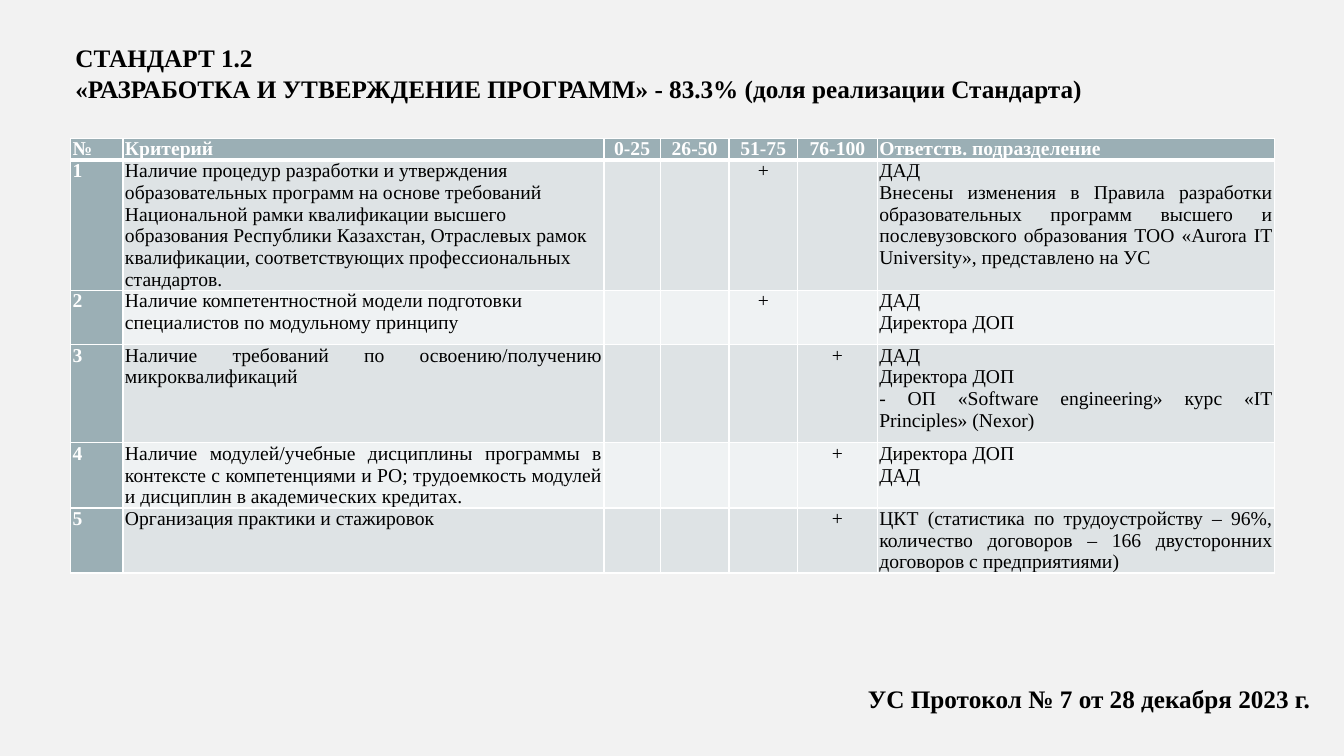
from lxml import etree
from pptx import Presentation, util as u
from pptx.dml.color import RGBColor
from pptx.enum import text as t
from pptx.oxml import ns

LEFT, CENTER, JUSTIFY = t.PP_ALIGN.LEFT, t.PP_ALIGN.CENTER, t.PP_ALIGN.JUSTIFY
COLUMN_WIDTHS = [1.32, 12.12, 1.42, 1.73, 1.73, 2.01, 10.01]
ROW_HEIGHTS = [0.56, 3.28, 1.37, 2.47, 1.64, 1.64]
HEADINGS = ["№", "Критерий", "0-25", "26-50", "51-75", "76-100", "Ответств. подразделение"]
SCORE_COLUMNS = range(2, 6)
CRITERIA = [
    ("Наличие процедур разработки и утверждения образовательных программ на основе требований "
     "Национальной рамки квалификации высшего образования Республики Казахстан, Отраслевых рамок "
     "квалификации, соответствующих профессиональных стандартов.", LEFT, "51-75",
     ["ДАД", "Внесены изменения в Правила разработки образовательных программ высшего и "
      "послевузовского образования ТОО «Aurora IT University», представлено на УС"]),
    ("Наличие компетентностной модели подготовки специалистов по модульному принципу",
     LEFT, "51-75", ["ДАД", "Директора ДОП"]),
    ("Наличие требований по освоению/получению микроквалификаций", JUSTIFY, "76-100",
     ["ДАД", "Директора ДОП", "- ОП «Software engineering» курс «IT Principles» (Nexor)"]),
    ("Наличие модулей/учебные дисциплины программы в контексте с компетенциями и РО; "
     "трудоемкость модулей и дисциплин в академических кредитах.", JUSTIFY, "76-100",
     ["Директора ДОП", "ДАД"]),
    ("Организация практики и стажировок", JUSTIFY, "76-100",
     ["ЦКТ (статистика по трудоустройству – 96%, количество договоров – 166 двусторонних "
      "договоров с предприятиями)"]),
]


def color(value):
    """Turn a hex string into a colour."""
    return RGBColor.from_string(value)


class StandardSlide:
    """Hold the style and the current slide."""

    font = "Times New Roman"
    ink, white, accent = "000000", "FFFFFF", "9BAFB5"
    bands = ["DEE3E5", "EFF2F3"]

    def __init__(self, deck):
        """Add a blank slide with a plain background."""
        self.slide = deck.slides.add_slide(deck.slide_layouts[6])
        self.slide.background.fill.solid()
        self.slide.background.fill.fore_color.rgb = color("F2F2F2")

    def paragraphs(self, frame, lines, size, ink, bold, align):
        """Fill a text frame with one paragraph per line."""
        for index, line in enumerate(lines):
            paragraph = frame.add_paragraph() if index else frame.paragraphs[0]
            paragraph.alignment = align
            run = paragraph.add_run()
            run.text = line
            run.font.name, run.font.size, run.font.bold = self.font, u.Pt(size), bold
            run.font.color.rgb = color(ink)

    def heading(self, place, lines, align, wrap):
        """Add a bold text box."""
        frame = self.slide.shapes.add_textbox(*map(u.Cm, place)).text_frame
        frame.word_wrap = wrap
        frame.vertical_anchor = t.MSO_ANCHOR.TOP if wrap else t.MSO_ANCHOR.MIDDLE
        self.paragraphs(frame, lines, 18, self.ink, True, align)

    def border(self, cell, side, points):
        """Draw one white cell edge."""
        edge = etree.SubElement(cell._tc.get_or_add_tcPr(), ns.qn(f"a:ln{side}"), w=str(u.Pt(points)))
        fill = etree.SubElement(edge, ns.qn("a:solidFill"))
        etree.SubElement(fill, ns.qn("a:srgbClr"), val=self.white)

    def table(self, left, top, widths, heights):
        """Add an empty table of the given column widths and row heights."""
        grid = self.slide.shapes.add_table(
            len(heights), len(widths), u.Cm(left), u.Cm(top),
            u.Cm(sum(widths)), u.Cm(sum(heights))).table
        grid.horz_banding = False
        for column, width in zip(grid.columns, widths):
            column.width = u.Cm(width)
        for row, height in zip(grid.rows, heights):
            row.height = u.Cm(height)
        return grid

    def cell(self, grid, row, column, lines, align):
        """Style and fill one table cell."""
        cell = grid.cell(row, column)
        marked = row == 0 or column == 0
        cell.margin_left = cell.margin_right = u.Cm(0.05)
        cell.margin_top = cell.margin_bottom = 0
        for side in "LRTB":
            thick = (row, side) in [(0, "B"), (1, "T")]
            self.border(cell, side, 3 if thick else 1)
        cell.fill.solid()
        cell.fill.fore_color.rgb = color(self.accent if marked else self.bands[(row - 1) % 2])
        self.paragraphs(cell.text_frame, lines, 14, self.white if marked else self.ink, marked, align)


def main():
    """Build the slide and save it."""
    deck = Presentation()
    deck.slide_width, deck.slide_height = u.Cm(33.87), u.Cm(19.05)
    page = StandardSlide(deck)

    ratings = page.table(1.78, 3.48, COLUMN_WIDTHS, ROW_HEIGHTS)
    for column, name in enumerate(HEADINGS):
        page.cell(ratings, 0, column, [name], CENTER if column in SCORE_COLUMNS else JUSTIFY)
    for row, (criterion, align, score, departments) in enumerate(CRITERIA, 1):
        page.cell(ratings, row, 0, [str(row)], JUSTIFY)
        page.cell(ratings, row, 1, [criterion], align)
        for column in SCORE_COLUMNS:
            page.cell(ratings, row, column, ["+"] if HEADINGS[column] == score else [], CENTER)
        page.cell(ratings, row, 6, departments, JUSTIFY)

    page.heading((1.65, 0.94, 26.14, 1.8), [
        "СТАНДАРТ 1.2",
        "«РАЗРАБОТКА И УТВЕРЖДЕНИЕ ПРОГРАММ» - 83.3% (доля реализации Стандарта)"], LEFT, False)
    page.heading((21.03, 17.09, 12.83, 1.02), ["УС Протокол № 7 от 28 декабря 2023 г."], CENTER, True)
    deck.save("out.pptx")


if __name__ == "__main__":
    main()
